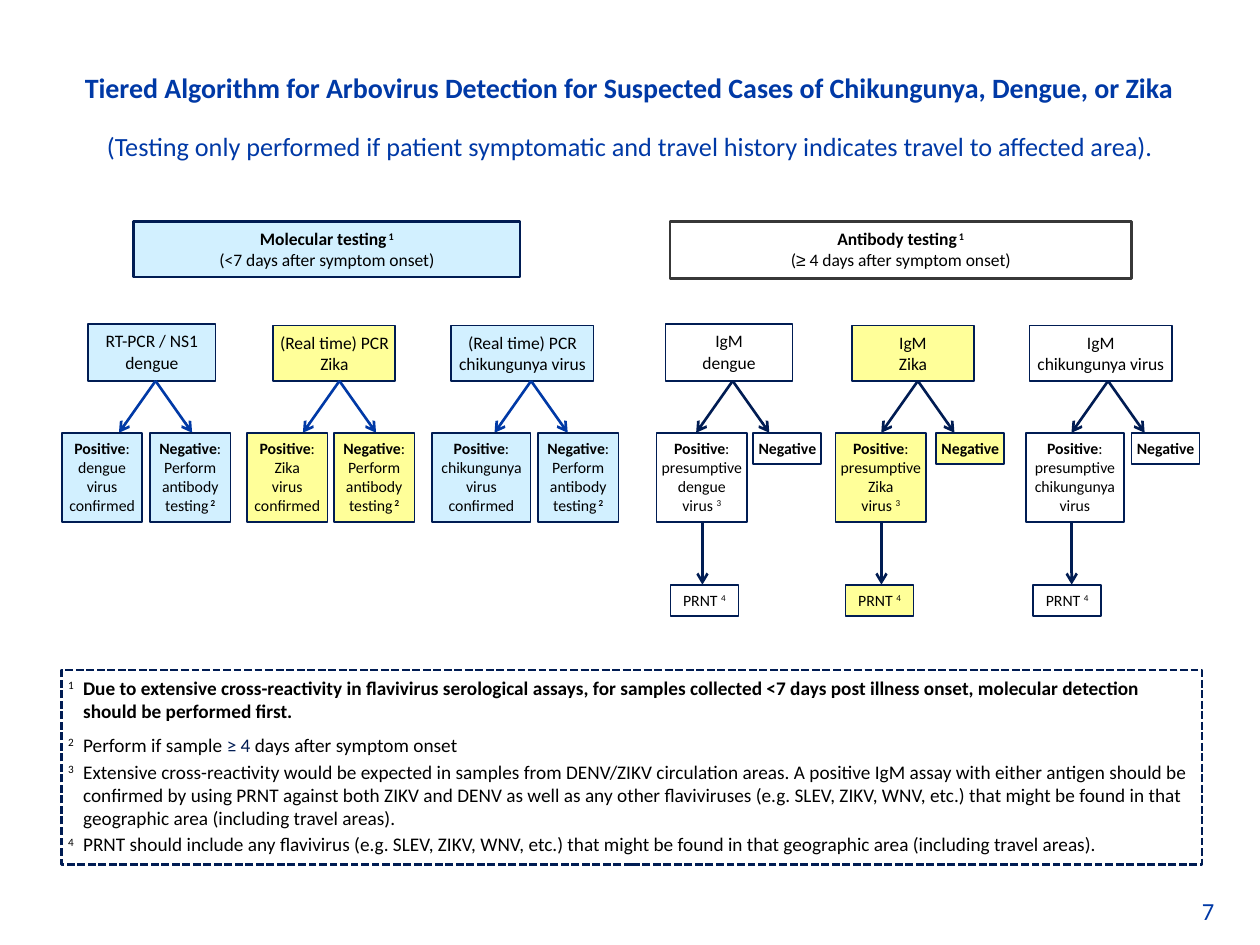
from dataclasses import dataclass

from lxml import etree
from pptx import Presentation
from pptx.dml.color import RGBColor
from pptx.enum.dml import MSO_LINE
from pptx.enum.shapes import MSO_CONNECTOR, MSO_SHAPE
from pptx.enum.text import MSO_ANCHOR, PP_ALIGN
from pptx.oxml.ns import qn
from pptx.util import Pt

BLUE = RGBColor(0x00, 0x39, 0xA6)
NAVY = RGBColor(0x00, 0x1C, 0x53)
CHARCOAL = RGBColor(0x38, 0x38, 0x38)
BLACK = RGBColor(0x00, 0x00, 0x00)
WHITE = RGBColor(0xFF, 0xFF, 0xFF)
PALE_BLUE = RGBColor(0xD2, 0xF0, 0xFF)
YELLOW = RGBColor(0xFF, 0xFF, 0x99)

BOLD = {"bold": True}
RAISED = {"raised": True}
BOLD_RAISED = {"bold": True, "raised": True}

TEST_BOTTOM, RESULT_TOP, RESULT_HEIGHT = 91, 120.6, 51.1
LABEL_WIDTH, LABEL_HEIGHT = 38.9, 18
PRNT_TOP = 207.4


@dataclass
class Column:
    """One virus; horizontal offsets count from the left of its region."""
    left: float
    virus: str
    test: str
    test_at: float
    test_size: tuple
    apex: float
    positive_width: float
    negative_at: float
    fill: RGBColor
    prnt_at: float = 0
    positive_end: tuple = ()


MOLECULAR = [
    Column(0, "dengue", "RT-PCR / NS1", 15.1, (72.7, 32.4), 53.6, 46.1, 50.4, PALE_BLUE),
    Column(105.8, "Zika", "(Real time) PCR", 15.1, (69.8, 31.7), 52.9, 46.1, 49.7, YELLOW),
    Column(211.7, "chikungunya", "(Real time) PCR", 10.8, (81.4, 31.7), 56.5, 56.2, 60.4,
           PALE_BLUE),
]
VIRUS_NOTE = ("virus ", ("3", RAISED))
ANTIBODY = [
    Column(0, "dengue", "IgM", 5.1, (72.7, 32.4), 43.6, 51.8, 55.4, WHITE, 8, VIRUS_NOTE),
    Column(102.3, "Zika", "IgM", 9.4, (69.8, 31.7), 47.1, 51.8, 57.6, YELLOW, 5.8, VIRUS_NOTE),
    Column(211, "chikungunya", "IgM", 2.2, (81.4, 31.7), 47.1, 56.2, 60.5, WHITE, 4.3,
           ("virus",)),
]

NOTES = [
    ("1", [("Due to extensive cross-reactivity in flavivirus serological assays, for samples "
            "collected <7 days post illness onset, molecular detection should be performed "
            "first.", BOLD)]),
    ("2", ["Perform if sample ", ("≥ 4", {"color": NAVY}), " days after symptom onset"]),
    ("3", ["Extensive cross-reactivity would be expected in samples from DENV/ZIKV circulation "
           "areas. A positive IgM assay with either antigen should be confirmed by using PRNT "
           "against both ZIKV and DENV as well as any other flaviviruses (e.g. SLEV, ZIKV, WNV, "
           "etc.) that might be found in that geographic area (including travel areas)."]),
    ("4", ["PRNT should include any flavivirus (e.g. SLEV, ZIKV, WNV, etc.) that might be found "
           "in that geographic area (including travel areas)."]),
]


def write(frame, paragraphs, size, color=BLACK, align=PP_ALIGN.CENTER):
    """Fill a frame; each paragraph is a sequence of strings or (string, style) pairs."""
    for number, pieces in enumerate(paragraphs):
        paragraph = frame.paragraphs[0] if number == 0 else frame.add_paragraph()
        paragraph.alignment = align
        for piece in pieces:
            words, style = (piece, {}) if isinstance(piece, str) else piece
            run = paragraph.add_run()
            run.text = words
            run.font.size = Pt(size)
            run.font.name = style.get("name", "Calibri")
            run.font.bold = style.get("bold", False)
            run.font.color.rgb = style.get("color", color)
            if style.get("raised"):
                run._r.get_or_add_rPr().set("baseline", "30000")


def add_box(slide, box, paragraphs, size=9, fill=None, line=NAVY, weight=1, inset=1.5,
            align=PP_ALIGN.CENTER):
    shape = slide.shapes.add_shape(MSO_SHAPE.RECTANGLE, *map(Pt, box))
    shape.shadow.inherit = False
    if fill is None:
        shape.fill.background()
    else:
        shape.fill.solid()
        shape.fill.fore_color.rgb = fill
    shape.line.color.rgb = line
    shape.line.width = Pt(weight)
    frame = shape.text_frame
    frame.word_wrap = True
    frame.vertical_anchor = MSO_ANCHOR.TOP
    frame.margin_left = frame.margin_right = Pt(inset)
    frame.margin_top = frame.margin_bottom = Pt(3.6)
    write(frame, paragraphs, size, align=align)
    return shape


def add_arrow(slide, start, end, color):
    arrow = slide.shapes.add_connector(MSO_CONNECTOR.STRAIGHT, *map(Pt, start + end))
    arrow.line.color.rgb = color
    arrow.line.width = Pt(1.5)
    head = etree.SubElement(arrow.line._get_or_add_ln(), qn("a:tailEnd"))
    head.set("type", "arrow")
    etree.SubElement(arrow._element.spPr, qn("a:effectLst"))


def add_text(slide, box, words, size, bold=False, wrap=True, align=PP_ALIGN.CENTER):
    frame = slide.shapes.add_textbox(*map(Pt, box)).text_frame
    frame.word_wrap = wrap
    frame.vertical_anchor = MSO_ANCHOR.MIDDLE
    write(frame, [[(words, {"bold": bold})]], size, BLUE, align)


def add_test(slide, left, top, column, arrow_color):
    """Place the test box and the two arrows that lead to its results."""
    width, height = column.test_size
    name = "chikungunya virus" if column.virus == "chikungunya" else column.virus
    add_box(slide, (left + column.test_at, top + TEST_BOTTOM - height, width, height),
            [[column.test], [name]], 10, column.fill)
    apex = left + column.apex
    for reach in (-20.9, 20.9):
        add_arrow(slide, (apex, top + TEST_BOTTOM),
                  (apex + reach, top + RESULT_TOP), arrow_color)


def add_positive(slide, left, top, column, finding):
    add_box(slide, (left, top + RESULT_TOP, column.positive_width, RESULT_HEIGHT),
            [[("Positive", BOLD), ":"], *finding], fill=column.fill)


def add_molecular_region(slide, left, top):
    add_box(slide, (left + 41, top, 221, 31.7),
            [[("Molecular testing", BOLD), (" 1", BOLD_RAISED)],
             ["(<7 days after symptom onset)"]], 10, PALE_BLUE, weight=1.5, inset=3.6)
    for column in MOLECULAR:
        x = left + column.left
        add_test(slide, x, top, column, BLUE)
        add_positive(slide, x, top, column, [[column.virus], ["virus confirmed"]])
        add_box(slide, (x + column.negative_at, top + RESULT_TOP, 46.1, RESULT_HEIGHT),
                [[("Negative", BOLD), ":"], ["Perform"], ["antibody"],
                 ["testing", (" 2", BOLD_RAISED)]], fill=column.fill, inset=2.2)


def add_antibody_region(slide, left, top):
    add_box(slide, (left + 7.9, top, 263.5, 32.4),
            [[("Antibody testing", BOLD), (" 1", BOLD_RAISED)],
             ["(", ("≥", {"name": "Arial"}), " 4 days after symptom onset)"]],
            10, WHITE, CHARCOAL, 1.5, 3.6)
    for column in ANTIBODY:
        x = left + column.left
        add_test(slide, x, top, column, NAVY)
        add_positive(slide, x, top, column,
                     [["presumptive"], [column.virus], column.positive_end])
        add_box(slide, (x + column.negative_at, top + RESULT_TOP, LABEL_WIDTH, LABEL_HEIGHT),
                [[("Negative", BOLD)]], fill=column.fill)
        stem = x + 26.3
        add_arrow(slide, (stem, top + RESULT_TOP + RESULT_HEIGHT), (stem, top + PRNT_TOP), NAVY)
        add_box(slide, (x + column.prnt_at, top + PRNT_TOP, LABEL_WIDTH, LABEL_HEIGHT),
                [["PRNT ", ("4", RAISED)]], fill=column.fill)


def add_notes(slide, box):
    """Place the dashed footnote box with hanging numbers."""
    paragraphs = [[(number + "\t", RAISED), *pieces] for number, pieces in NOTES]
    notes = add_box(slide, box, paragraphs, 11, weight=1.5, inset=3.6, align=PP_ALIGN.LEFT)
    notes.line.dash_style = MSO_LINE.SQUARE_DOT
    for number, paragraph in enumerate(notes.text_frame.paragraphs):
        if number:
            paragraph.space_before = Pt(6 if number == 1 else 2)
        properties = paragraph._p.get_or_add_pPr()
        properties.set("marL", str(Pt(8.6)))
        properties.set("indent", str(Pt(-8.6)))


def main():
    presentation = Presentation()
    presentation.slide_width, presentation.slide_height = Pt(720), Pt(540)
    slide = presentation.slides.add_slide(presentation.slide_layouts[6])
    add_text(slide, (35.3, 23, 648.7, 53.3),
             "Tiered Algorithm for Arbovirus Detection for Suspected Cases of Chikungunya, "
             "Dengue, or Zika", 16, bold=True)
    add_text(slide, (35.3, 70.6, 649.4, 25.2),
             "(Testing only performed if patient symptomatic and travel history indicates "
             "travel to affected area).", 15)
    add_molecular_region(slide, 35.3, 126.7)
    add_antibody_region(slide, 375.1, 126.7)
    add_notes(slide, (35.3, 383, 651.6, 110.9))
    add_text(slide, (679.7, 508.3, 31, 24.5), "7", 14, wrap=False, align=PP_ALIGN.LEFT)
    presentation.save("out.pptx")


if __name__ == "__main__":
    main()
